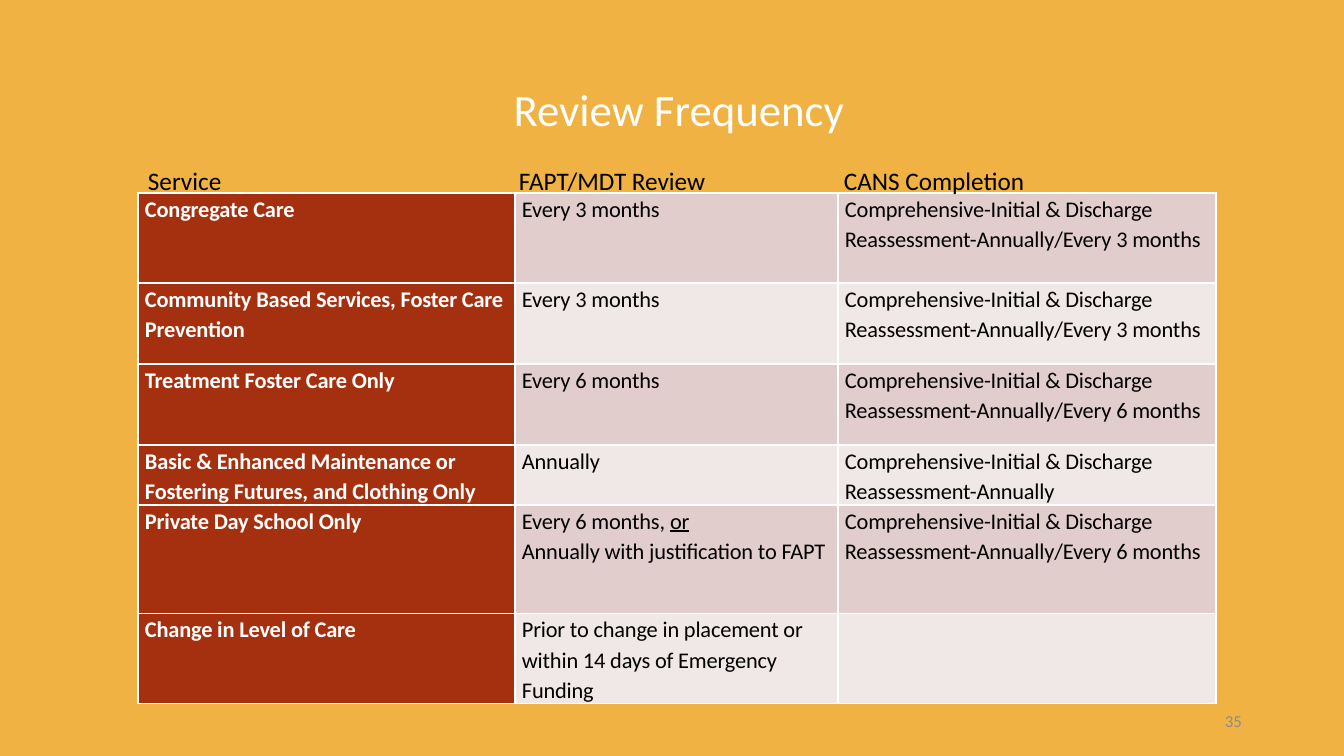
from lxml import etree
from pptx import Presentation
from pptx import util as u
from pptx.dml.color import RGBColor
from pptx.enum import text
from pptx.oxml import ns

# Content
TITLE = "Review Frequency"
HEADINGS = ("Service", "FAPT/MDT Review", "CANS Completion")
PAGE = "35"
UNDERLINED = "or"
INITIAL = "Comprehensive-Initial & Discharge"
# Each row: height, service, review lines, CANS lines
REVIEWS = [
    (90, "Congregate Care", ["Every 3 months"],
     [INITIAL, "Reassessment-Annually/Every 3 months"]),
    (81, "Community Based Services, Foster Care Prevention", ["Every 3 months"],
     [INITIAL, "Reassessment-Annually/Every 3 months"]),
    (81, "Treatment Foster Care Only", ["Every 6 months"],
     [INITIAL, "Reassessment-Annually/Every 6 months"]),
    (60, "Basic & Enhanced Maintenance or Fostering Futures, and Clothing Only",
     ["Annually"], [INITIAL, "Reassessment-Annually"]),
    (109, "Private Day School Only",
     [("Every 6 months, ", UNDERLINED), "Annually with justification to FAPT"],
     [INITIAL, "Reassessment-Annually/Every 6 months"]),
    (90, "Change in Level of Care",
     ["Prior to change in placement or within 14 days of Emergency Funding"], []),
]

THEME = {
    "font": "Calibri",
    "background": "EFB243", "white": "FFFFFF", "black": "000000",
    "page": "8C8C8C", "service": "A5300F", "bands": ("E1CDCC", "F0E8E7"),
    "title_size": 32, "heading_size": 18, "body_size": 16, "page_size": 12,
}

# Layout in px
SLIDE = (1344, 756)
TITLE_BOX = (61, 71, 1236, 82)
HEADING_BOX = (138, 160, 1078, 40)
PAGE_BOX = (950, 701, 302, 40)
TABLE_LEFT, TABLE_TOP = 138, 193
COLUMNS = (377, 323, 378)
HEADING_TABS = (371, 696)
INSET, CELL_INSET = 10, 7


def px(length):
    return u.Emu(round(length * 914400 / 100.8))


def color(name):
    return RGBColor.from_string(THEME.get(name, name))


def style(paragraph, size, tint, bold=False):
    font = paragraph.font
    font.name, font.size, font.bold = THEME["font"], u.Pt(THEME[size]), bold
    font.color.rgb = color(tint)


def add_label(slide, box, words, size, tint, align):
    frame = slide.shapes.add_textbox(*map(px, box)).text_frame
    frame.word_wrap = True
    frame.vertical_anchor = text.MSO_ANCHOR.MIDDLE
    frame.margin_left = frame.margin_right = px(INSET)
    label = frame.paragraphs[0]
    label.add_run().text = words
    label.alignment = align
    style(label, size, tint)
    return label


def add_tabs(paragraph, stops):
    properties = paragraph._p.get_or_add_pPr()
    tabs = etree.Element(ns.qn("a:tabLst"))
    for stop in stops:
        etree.SubElement(tabs, ns.qn("a:tab"), pos=str(px(stop)), algn="l")
    properties.insert(0, tabs)


def add_borders(cell):
    properties = cell._tc.get_or_add_tcPr()
    for index, side in enumerate(("lnL", "lnR", "lnT", "lnB")):
        line = etree.Element(ns.qn(f"a:{side}"), w=str(u.Pt(1)))
        fill = etree.SubElement(line, ns.qn("a:solidFill"))
        etree.SubElement(fill, ns.qn("a:srgbClr"), val=THEME["white"])
        properties.insert(index, line)


def fill_cell(cell, lines, fill, tint, bold):
    cell.fill.solid()
    cell.fill.fore_color.rgb = color(fill)
    add_borders(cell)
    cell.margin_left = cell.margin_right = px(CELL_INSET)
    cell.margin_top = cell.margin_bottom = 0
    frame = cell.text_frame
    for _ in lines[1:]:
        frame.add_paragraph()
    for paragraph, line in zip(frame.paragraphs, lines):
        paragraph.line_spacing = 1.1
        style(paragraph, "body_size", tint, bold)
        for words in (line,) if isinstance(line, str) else line:
            run = paragraph.add_run()
            run.text = words
            run._r.get_or_add_rPr().set("spc", "-10")
            if words == UNDERLINED:
                run.font.underline = True


def add_reviews(slide):
    heights = [review[0] for review in REVIEWS]
    table = slide.shapes.add_table(
        len(REVIEWS), len(COLUMNS), px(TABLE_LEFT), px(TABLE_TOP),
        px(sum(COLUMNS)), px(sum(heights))).table
    table.first_row = table.horz_banding = False
    for column, width in zip(table.columns, COLUMNS):
        column.width = px(width)
    for index, (height, service, review, cans) in enumerate(REVIEWS):
        table.rows[index].height = px(height)
        band = THEME["bands"][index % 2]
        fill_cell(table.cell(index, 0), [service], "service", "white", True)
        fill_cell(table.cell(index, 1), review, band, "black", False)
        fill_cell(table.cell(index, 2), cans, band, "black", False)


def main():
    deck = Presentation()
    deck.slide_width, deck.slide_height = map(px, SLIDE)
    slide = deck.slides.add_slide(deck.slide_layouts[6])
    slide.background.fill.solid()
    slide.background.fill.fore_color.rgb = color("background")

    # Title, table, page number and column headings
    title = add_label(slide, TITLE_BOX, TITLE, "title_size", "white",
                      text.PP_ALIGN.CENTER)
    title.line_spacing = 0.9
    add_reviews(slide)
    add_label(slide, PAGE_BOX, PAGE, "page_size", "page", text.PP_ALIGN.RIGHT)
    headings = add_label(slide, HEADING_BOX, "\t".join(HEADINGS),
                         "heading_size", "black", text.PP_ALIGN.LEFT)
    add_tabs(headings, HEADING_TABS)

    deck.save("out.pptx")


if __name__ == "__main__":
    main()
